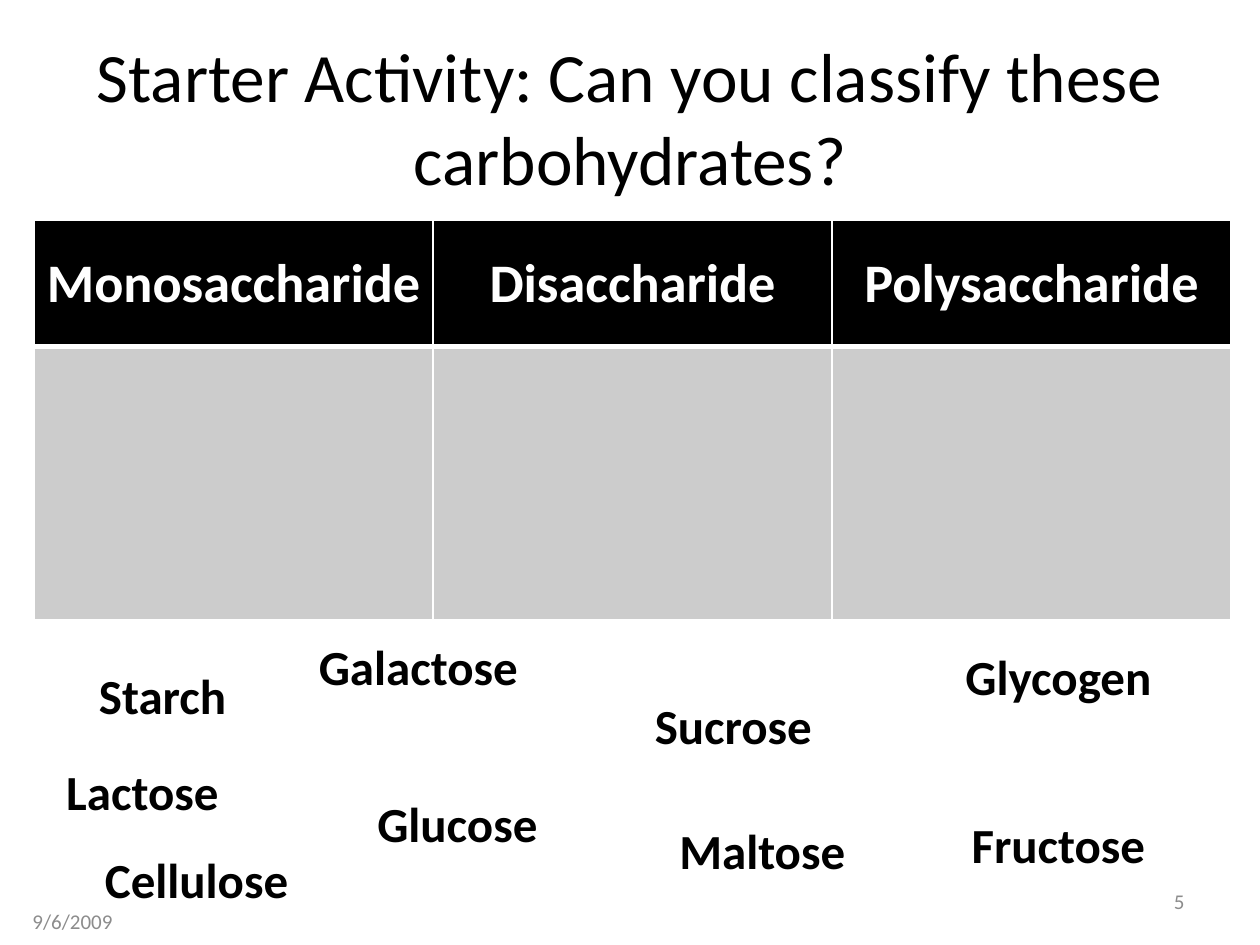
from lxml import etree
from pptx import Presentation
from pptx.dml.color import RGBColor
from pptx.enum.text import MSO_ANCHOR, PP_ALIGN
from pptx.oxml.ns import qn
from pptx.util import Inches, Pt

LEFT, CENTER, RIGHT = PP_ALIGN.LEFT, PP_ALIGN.CENTER, PP_ALIGN.RIGHT
MIDDLE = MSO_ANCHOR.MIDDLE
BLACK, WHITE, GRAY, PALE = "000000", "FFFFFF", "8C8C8C", "CCCCCC"

TITLE = {"size": Pt(39.6), "bold": False}
HEADER = {"size": Pt(31), "bold": True}
WORD = {"size": Pt(28), "bold": True}
FOOTER = {"size": Pt(12), "bold": False}

CATEGORIES = ["Monosaccharide", "Disaccharide", "Polysaccharide"]
WORD_HEIGHT = 0.57
WORDS = [
    ("Fructose", 7.58, 6.41, 1.64),
    ("Glucose", 2.81, 6.25, 1.64),
    ("Galactose", 2.42, 5, 1.8),
    ("Maltose", 5.23, 6.46, 1.64),
    ("Sucrose", 5, 5.47, 1.64),
    ("Starch", 0.47, 5.23, 1.64),
    ("Glycogen", 7.5, 5.08, 1.8),
    ("Cellulose", 0.62, 6.69, 1.88),
    ("Lactose", 0.23, 5.99, 1.8),
]


def rgb(value):
    """Return the colour for a hex string."""
    return RGBColor.from_string(value)


def write(tf, text, fmt, color, align):
    """Fill a text frame with one formatted paragraph."""
    p = tf.paragraphs[0]
    p.alignment = align
    r = p.add_run()
    r.text = text
    for name, value in {"name": "Calibri", **fmt}.items():
        setattr(r.font, name, value)
    r.font.color.rgb = rgb(color)


def add_text(s, box, text, fmt, color=BLACK, align=CENTER):
    """Add a wrapped, vertically centred text box."""
    sp = s.shapes.add_textbox(*map(Inches, box))
    tf = sp.text_frame
    tf.word_wrap = True
    tf.vertical_anchor = MIDDLE
    write(tf, text, fmt, color, align)


def set_borders(cell, widths):
    """Draw white cell borders from a dict of side and point width."""
    tcPr = cell._tc.get_or_add_tcPr()
    for i, (side, width) in enumerate(widths.items()):
        ln = etree.Element(qn("a:ln" + side), w=str(Pt(width)))
        fill = etree.SubElement(ln, qn("a:solidFill"))
        etree.SubElement(fill, qn("a:srgbClr"), val=WHITE)
        tcPr.insert(i, ln)


def add_sorting_table(s, box, header_height):
    """Add the category headers above their empty answer cells."""
    shape = s.shapes.add_table(2, len(CATEGORIES), *map(Inches, box))
    table = shape.table
    table.rows[0].height = Inches(header_height)
    table.rows[1].height = Inches(box[3] - header_height)
    for col, category in enumerate(CATEGORIES):
        table.columns[col].width = Inches(box[2] / len(CATEGORIES))
        head, body = table.cell(0, col), table.cell(1, col)
        for cell, color in ((head, BLACK), (body, PALE)):
            cell.fill.solid()
            cell.fill.fore_color.rgb = rgb(color)
        head.vertical_anchor = MIDDLE
        head.margin_left = head.margin_right = Inches(0.05)
        write(head.text_frame, category, HEADER, WHITE, CENTER)
        set_borders(head, {"L": 1, "R": 1, "T": 1, "B": 3})
        set_borders(body, {"L": 1, "R": 1, "T": 3, "B": 1})


def add_word_bank(s, words):
    """Scatter the carbohydrate names to be sorted."""
    for text, left, top, width in words:
        add_text(s, (left, top, width, WORD_HEIGHT), text, WORD)


def add_footer(s, date_box, number_box):
    """Add the date and the slide number."""
    add_text(s, date_box, "9/6/2009", FOOTER, GRAY, LEFT)
    add_text(s, number_box, "5", FOOTER, GRAY, RIGHT)


def main():
    """Build and save the slide."""
    prs = Presentation()
    prs.slide_width, prs.slide_height = Inches(10), Inches(7.5)
    s = prs.slides.add_slide(prs.slide_layouts[6])
    add_text(s, (0.5, 0.3, 9, 1.25),
             "Starter Activity: Can you classify these carbohydrates?", TITLE)
    add_sorting_table(s, (0.27, 1.75, 9.5, 3.17), 1)
    add_word_bank(s, WORDS)
    add_footer(s, (0.16, 7.11, 2.33, 0.4), (7.17, 6.95, 2.33, 0.4))
    prs.save("out.pptx")


if __name__ == "__main__":
    main()
